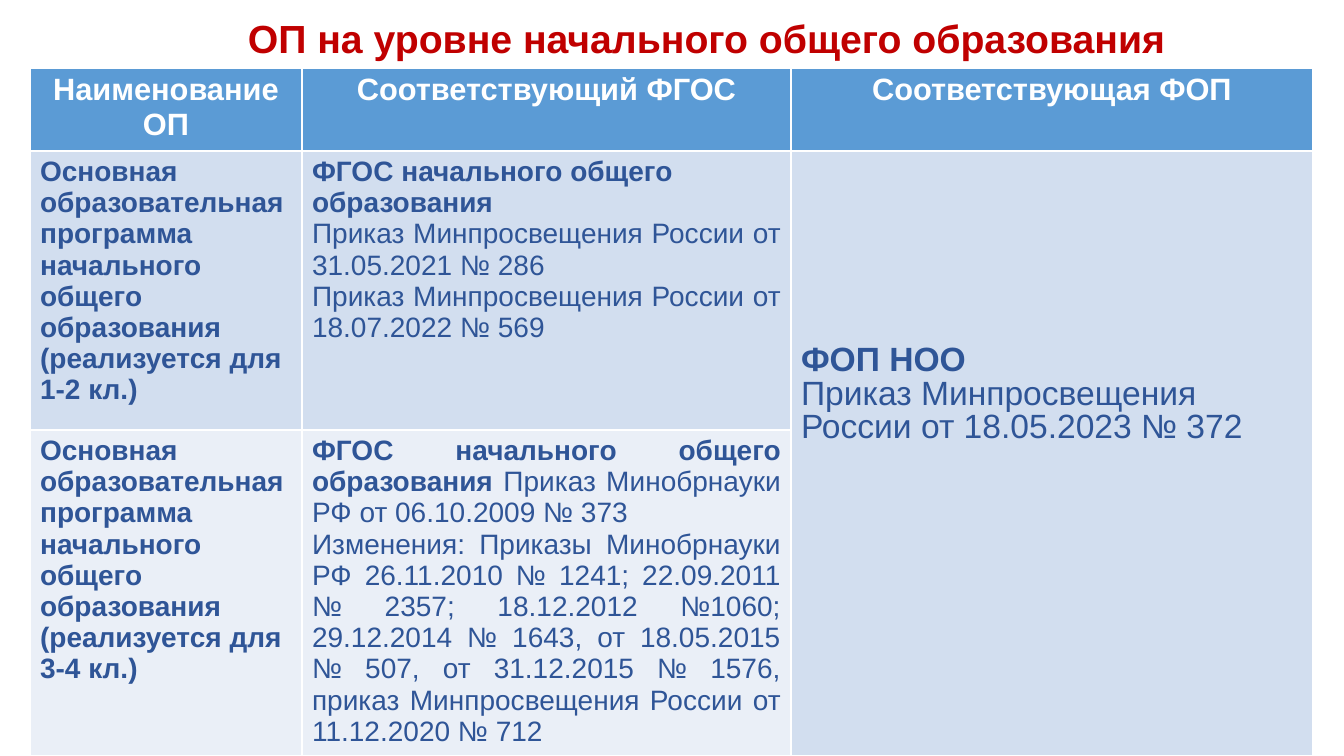
from dataclasses import dataclass

from pptx import Presentation, util as u
from pptx.dml.color import RGBColor
from pptx.enum import text


@dataclass(frozen=True)
class Theme:
    font: str = "Arial"
    title: str = "C00000"
    header_fill: str = "5B9BD5"
    header_text: str = "FFFFFF"
    body_text: str = "2F5597"
    bands: tuple = ("D2DEEF", "EAEFF7")
    title_size: int = 28
    header_size: int = 22
    body_size: int = 20
    plan_size: int = 24


LEFT, CENTER, JUSTIFY = (
    text.PP_ALIGN.LEFT, text.PP_ALIGN.CENTER, text.PP_ALIGN.JUSTIFY)


class Deck:
    def __init__(self, theme):
        self.theme = theme
        self.prs = Presentation()
        self.prs.slide_width = self.px(1344)
        self.prs.slide_height = self.px(756)
        self.s = self.prs.slides.add_slide(self.prs.slide_layouts[5])

    def px(self, n):
        return u.Emu(round(n * 12192000 / 1344))

    def add_text(self, tf, paragraphs, size, color, spacing=None):
        tf.word_wrap = True
        for i, (align, runs) in enumerate(paragraphs):
            p = tf.paragraphs[0] if i == 0 else tf.add_paragraph()
            p.alignment = align
            if spacing:
                p.line_spacing = spacing
            for words, bold in runs:
                r = p.add_run()
                r.text = words
                r.font.name = self.theme.font
                r.font.size = u.Pt(size)
                r.font.bold = bold
                r.font.color.rgb = RGBColor.from_string(color)

    def title(self, words, x, y, w, h):
        sp = self.s.shapes.title
        sp.left, sp.top, sp.width, sp.height = map(self.px, (x, y, w, h))
        tf = sp.text_frame
        tf.vertical_anchor = text.MSO_ANCHOR.MIDDLE
        self.add_text(tf, [(CENTER, [(words, True)])],
                      self.theme.title_size, self.theme.title)

    def table(self, x, y, widths, heights):
        frame = self.s.shapes.add_table(
            len(heights), len(widths),
            *map(self.px, (x, y, sum(widths), sum(heights))))
        for col, w in zip(frame.table.columns, widths):
            col.width = self.px(w)
        for row, h in zip(frame.table.rows, heights):
            row.height = self.px(h)
        return frame.table

    def cell(self, cell, paragraphs, fill, size, color, spacing=None):
        cell.fill.solid()
        cell.fill.fore_color.rgb = RGBColor.from_string(fill)
        self.add_text(cell.text_frame, paragraphs, size, color, spacing)

    def save(self):
        self.prs.save("out.pptx")


HEADERS = ["Наименование ОП", "Соответствующий ФГОС", "Соответствующая ФОП"]
GRADES = ["1-2", "3-4"]
STANDARD = "ФГОС начального общего образования"
STANDARDS = [
    [(LEFT, [(STANDARD, True)]),
     (JUSTIFY, [("Приказ Минпросвещения России от 31.05.2021 № 286", False)]),
     (JUSTIFY, [("Приказ Минпросвещения России от 18.07.2022 № 569", False)])],
    [(JUSTIFY, [(STANDARD + " ", True),
                ("Приказ Минобрнауки РФ от 06.10.2009 № 373", False)]),
     (JUSTIFY, [("Изменения: Приказы Минобрнауки РФ 26.11.2010 № 1241; "
                 "22.09.2011 № 2357; 18.12.2012 №1060; 29.12.2014 № 1643, "
                 "от 18.05.2015 № 507, от 31.12.2015 № 1576, приказ "
                 "Минпросвещения России от 11.12.2020 № 712", False)])],
]
PLAN = [
    (LEFT, [("ФОП НОО", True)]),
    (LEFT, [("Приказ Минпросвещения России от 18.05.2023 № 372", False)]),
]


def main():
    theme = Theme()
    deck = Deck(theme)
    deck.title("ОП на уровне начального общего образования", 69, 10, 1275, 56)
    table = deck.table(30, 68, [272, 489, 522], [83, 279, 326])

    for col, header in enumerate(HEADERS):
        deck.cell(table.cell(0, col), [(CENTER, [(header, True)])],
                  theme.header_fill, theme.header_size, theme.header_text)

    rows = zip(GRADES, STANDARDS, theme.bands)
    for row, (grades, standard, band) in enumerate(rows, start=1):
        program = [
            (LEFT, [("Основная образовательная программа "
                     "начального общего образования", True)]),
            (LEFT, [(f"(реализуется для {grades} кл.)", True)]),
        ]
        for col, paragraphs in enumerate([program, standard]):
            deck.cell(table.cell(row, col), paragraphs,
                      band, theme.body_size, theme.body_text)

    plan = table.cell(1, 2)
    plan.merge(table.cell(2, 2))
    plan.vertical_anchor = text.MSO_ANCHOR.MIDDLE
    plan.margin_bottom = deck.px(122)
    deck.cell(plan, PLAN, theme.bands[0], theme.plan_size,
              theme.body_text, spacing=0.9)
    deck.save()


if __name__ == "__main__":
    main()
